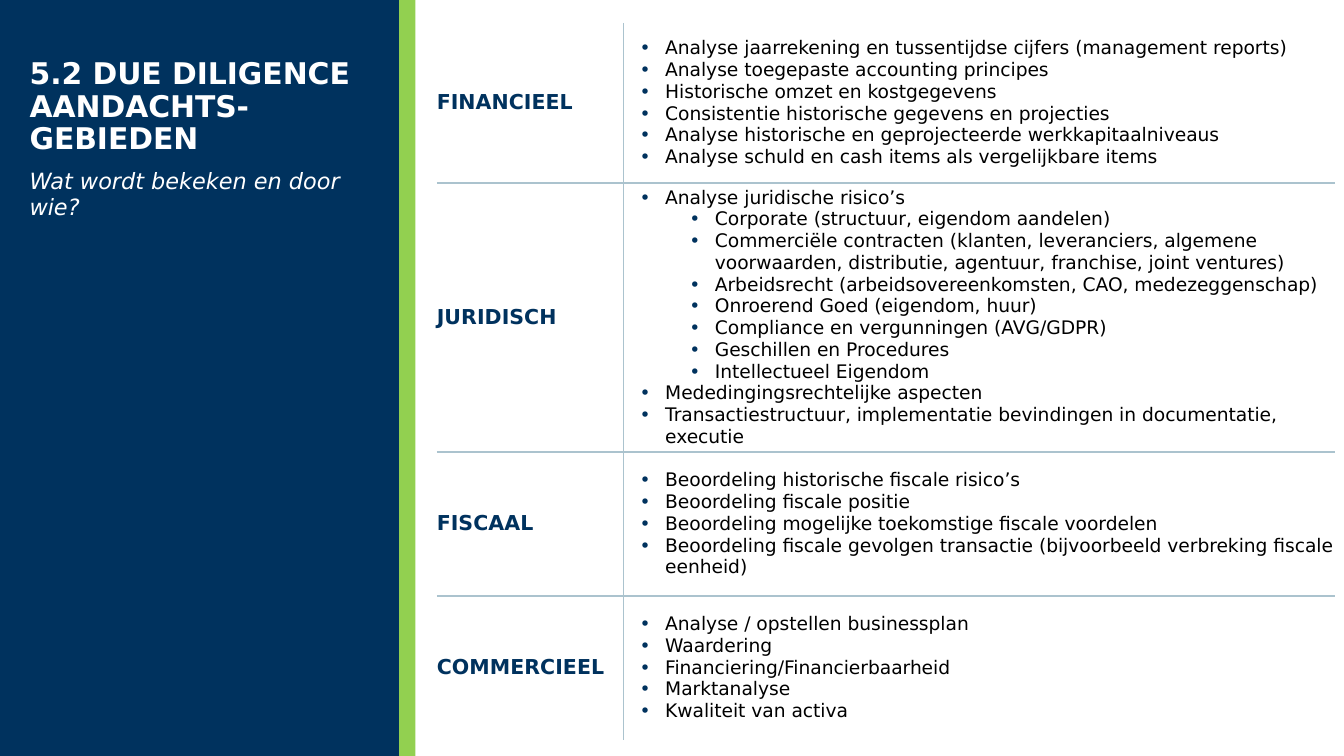
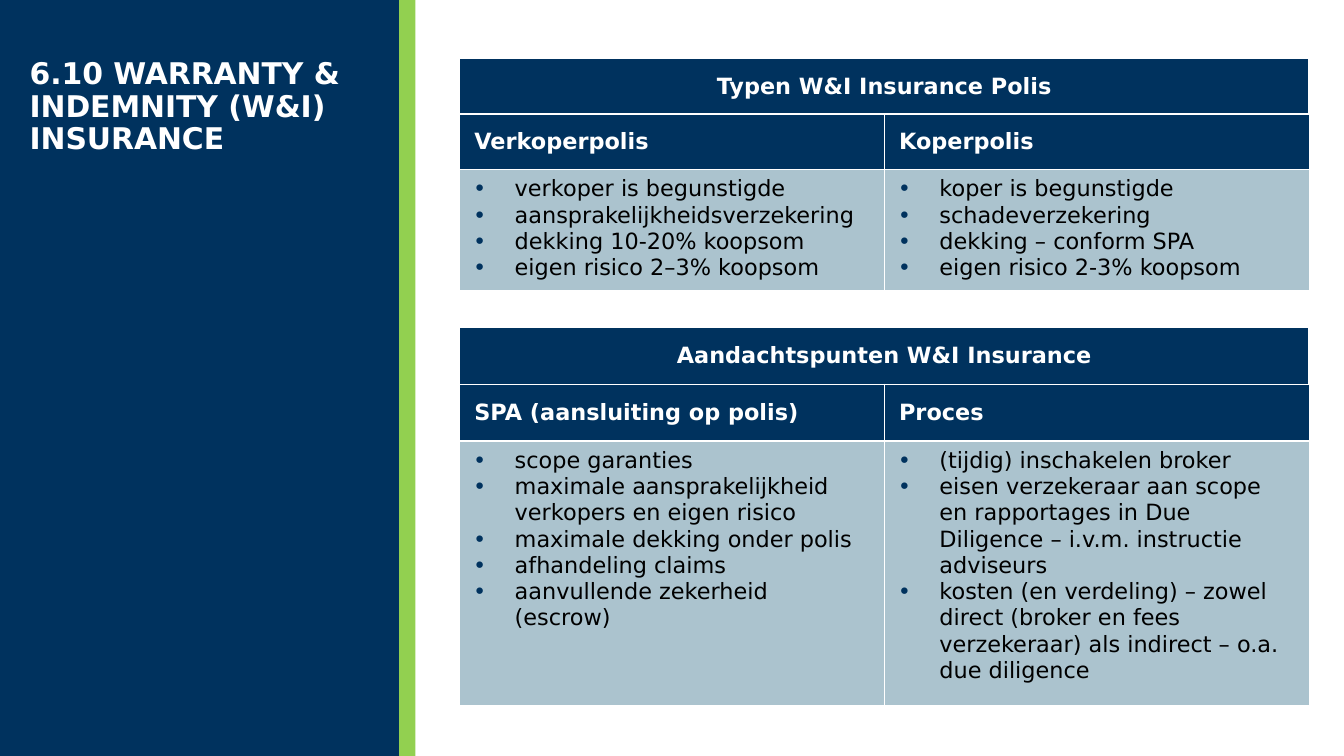
from lxml import etree
from pptx import Presentation
from pptx import util as u
from pptx.dml.color import RGBColor
from pptx.enum import shapes, text
from pptx.oxml import ns

COLOURS = {"navy": "00325E", "green": "92D050", "mist": "ABC3CE",
           "white": "FFFFFF", "black": "000000"}
FONT = "DejaVu Sans"
NO_STYLE = "{2D5ABB26-0587-4C30-8999-92F81FD0307C}"
SIDE_LEFT, SIDE_WIDTH = 0.22, 2.57

# Each point is its wording, or a (wording, level) pair.
DILIGENCE_AREAS = [
    ("FINANCIEEL", 1.19, [
        "Analyse jaarrekening en tussentijdse cijfers (management reports)",
        "Analyse toegepaste accounting principes",
        "Historische omzet en kostgegevens",
        "Consistentie historische gegevens en projecties",
        "Analyse historische en geprojecteerde werkkapitaalniveaus",
        "Analyse schuld en cash items als vergelijkbare items"]),
    ("JURIDISCH", 2, [
        "Analyse juridische risico’s",
        ("Corporate (structuur, eigendom aandelen)", 1),
        ("Commerciële contracten (klanten, leveranciers, algemene voorwaarden, "
         "distributie, agentuur, franchise, joint ventures)", 1),
        ("Arbeidsrecht (arbeidsovereenkomsten, CAO, medezeggenschap)", 1),
        ("Onroerend Goed (eigendom, huur)", 1),
        ("Compliance en vergunningen (AVG/GDPR)", 1),
        ("Geschillen en Procedures", 1),
        ("Intellectueel Eigendom", 1),
        "Mededingingsrechtelijke aspecten",
        "Transactiestructuur, implementatie bevindingen in documentatie, executie"]),
    ("FISCAAL", 1.07, [
        "Beoordeling historische fiscale risico’s",
        "Beoordeling fiscale positie",
        "Beoordeling mogelijke toekomstige fiscale voordelen",
        "Beoordeling fiscale gevolgen transactie "
        "(bijvoorbeeld verbreking fiscale eenheid)"]),
    ("COMMERCIEEL", 1.07, [
        "Analyse / opstellen businessplan",
        "Waardering",
        "Financiering/Financierbaarheid",
        "Marktanalyse",
        "Kwaliteit van activa"]),
]

POLICY_TYPES = [
    ("Verkoperpolis", [
        "verkoper is begunstigde",
        "aansprakelijkheidsverzekering",
        "dekking 10-20% koopsom",
        "eigen risico 2–3% koopsom"]),
    ("Koperpolis", [
        "koper is begunstigde",
        "schadeverzekering",
        "dekking – conform SPA",
        "eigen risico 2-3% koopsom"]),
]

POLICY_CONCERNS = [
    ("SPA (aansluiting op polis)", [
        "scope garanties",
        "maximale aansprakelijkheid verkopers en eigen risico",
        "maximale dekking onder polis",
        "afhandeling claims",
        "aanvullende zekerheid (escrow)"]),
    ("Proces", [
        "(tijdig) inschakelen broker",
        "eisen verzekeraar aan scope en rapportages in Due Diligence "
        "– i.v.m. instructie adviseurs",
        "kosten (en verdeling) – zowel direct (broker en fees verzekeraar) "
        "als indirect – o.a. due diligence"]),
]


def rgb(name):
    return RGBColor.from_string(COLOURS[name])


def style_runs(para, size, colour, bold=False, italic=False):
    for span in para.runs:
        font = span.font
        font.name, font.size = FONT, u.Pt(size)
        font.bold, font.italic = bold, italic
        font.color.rgb = rgb(colour)


def set_indent(para, left, first):
    props = para._p.get_or_add_pPr()
    props.set("marL", str(u.Inches(left)))
    props.set("indent", str(u.Inches(first)))
    return props


def add_bullet(para, left, hang, tab=None):
    props = set_indent(para, left, -hang)
    colour = etree.SubElement(props, ns.qn("a:buClr"))
    etree.SubElement(colour, ns.qn("a:srgbClr"), val=COLOURS["navy"])
    etree.SubElement(props, ns.qn("a:buFont"), typeface=FONT)
    etree.SubElement(props, ns.qn("a:buChar"), char="•")
    if tab:
        stops = etree.SubElement(props, ns.qn("a:tabLst"))
        etree.SubElement(stops, ns.qn("a:tab"), pos=str(u.Inches(tab)), algn="l")


def fill_points(cell, points, size, hang, base_level=0, tab=None):
    """Write bulleted points; each nested level is indented 0.37 inch further."""
    frame = cell.text_frame
    for index, point in enumerate(points):
        wording, depth = (point, 0) if isinstance(point, str) else point
        para = frame.add_paragraph() if index else frame.paragraphs[0]
        para.text = wording
        para.level = base_level + depth
        add_bullet(para, hang + 0.37 * depth, hang, tab)
        style_runs(para, size, "black")


def set_margins(box, left, top, right, bottom):
    box.margin_left, box.margin_top = u.Inches(left), u.Inches(top)
    box.margin_right, box.margin_bottom = u.Inches(right), u.Inches(bottom)


def add_plain_table(page, left, top, widths, heights):
    frame = page.shapes.add_table(
        len(heights), len(widths), u.Inches(left), u.Inches(top),
        u.Inches(sum(widths)), u.Inches(sum(heights)))
    table = frame.table
    table.first_row = table.horz_banding = False
    table._tbl.tblPr.find(ns.qn("a:tableStyleId")).text = NO_STYLE
    for column, width in zip(table.columns, widths):
        column.width = u.Inches(width)
    for row, height in zip(table.rows, heights):
        row.height = u.Inches(height)
    return table


def rule_inner_edges(table, colour):
    """Draw a 1 pt line on every edge shared by two cells."""
    last_row, last_column = len(table.rows) - 1, len(table.columns) - 1
    for r, row in enumerate(table.rows):
        for c, cell in enumerate(row.cells):
            edges = [("a:lnL", c > 0), ("a:lnR", c < last_column),
                     ("a:lnT", r > 0), ("a:lnB", r < last_row)]
            props = cell._tc.get_or_add_tcPr()
            tags = [tag for tag, shared in edges if shared]
            for position, tag in enumerate(tags):
                line = etree.Element(ns.qn(tag), w=str(u.Pt(1)))
                solid = etree.SubElement(line, ns.qn("a:solidFill"))
                etree.SubElement(solid, ns.qn("a:srgbClr"), val=COLOURS[colour])
                props.insert(position, line)


def set_side_bands(deck, layout, page):
    """Draw the two side bands on a page, then hand them to its layout."""
    for placeholder in list(layout.placeholders):
        if placeholder.placeholder_format.type != shapes.PP_PLACEHOLDER.TITLE:
            placeholder._element.getparent().remove(placeholder._element)
    for position, (left, width, colour) in enumerate(
            [(0, 2.97, "navy"), (2.97, 0.12, "green")]):
        band = page.shapes.add_shape(
            shapes.MSO_SHAPE.RECTANGLE, u.Inches(left), 0,
            u.Inches(width), deck.slide_height)
        band.shadow.inherit = False
        band.fill.solid()
        band.fill.fore_color.rgb = rgb(colour)
        band.line.fill.background()
        layout.shapes._spTree.insert(2 + position, band._element)


def write_side_text(box, top, height, wording, size, **style):
    box.left, box.top = u.Inches(SIDE_LEFT), u.Inches(top)
    box.width, box.height = u.Inches(SIDE_WIDTH), u.Inches(height)
    frame = box.text_frame
    frame.text = wording
    frame.word_wrap = True
    frame.auto_size = text.MSO_AUTO_SIZE.SHAPE_TO_FIT_TEXT
    frame.vertical_anchor = text.MSO_ANCHOR.TOP
    set_margins(frame, 0, 0, 0, 0)
    para = frame.paragraphs[0]
    para.alignment = text.PP_ALIGN.LEFT
    style_runs(para, size, "white", **style)
    return para


def write_title(page, wording):
    para = write_side_text(page.shapes.title, 0.44, 0.73, wording, 16, bold=True)
    para.line_spacing = 0.9


def write_subtitle(page, wording):
    box = page.shapes.add_textbox(0, 0, 0, 0)
    write_side_text(box, 1.24, 0.4, wording, 12, italic=True)


def add_areas_table(page, left, top, areas):
    table = add_plain_table(page, left, top, [1.39, 5.29],
                            [height for _, height, _ in areas])
    for row, (name, _, points) in zip(table.rows, areas):
        label, details = row.cells
        label.text_frame.text = name
        style_runs(label.text_frame.paragraphs[0], 11, "navy", bold=True)
        set_margins(label, 0, 0.39, 0.08, 0.39)
        fill_points(details, points, 10, 0.19)
        set_margins(details, 0.12, 0, 0, 0)
        for cell in (label, details):
            cell.vertical_anchor = text.MSO_ANCHOR.MIDDLE
            cell.fill.background()
    rule_inner_edges(table, "mist")


def write_heading(cell, wording):
    cell.text_frame.text = wording
    cell.vertical_anchor = text.MSO_ANCHOR.MIDDLE
    para = cell.text_frame.paragraphs[0]
    set_indent(para, 0, 0)
    style_runs(para, 12, "white", bold=True)
    return para


def add_policy_table(page, left, top, heights, heading, columns):
    table = add_plain_table(page, left, top, [3.16, 3.16], heights)
    for r, row in enumerate(table.rows):
        for cell in row.cells:
            cell.fill.solid()
            cell.fill.fore_color.rgb = rgb("navy" if r < 2 else "mist")
    table.cell(0, 0).merge(table.cell(0, 1))
    write_heading(table.cell(0, 0), heading).alignment = text.PP_ALIGN.CENTER
    for c, (name, points) in enumerate(columns):
        column_head = table.cell(1, c)
        write_heading(column_head, name).level = 1
        set_margins(column_head, 0.11, 0.05, 0.11, 0.05)
        fill_points(table.cell(2, c), points, 12, 0.31, base_level=2, tab=0.2)
    rule_inner_edges(table, "white")


def build_diligence_page(page):
    write_title(page, "5.2 DUE DILIGENCE AANDACHTS-GEBIEDEN")
    write_subtitle(page, "Wat wordt bekeken en door wie?")
    add_areas_table(page, 3.25, 0.17, DILIGENCE_AREAS)


def build_insurance_page(page):
    write_title(page, "6.10 WARRANTY & INDEMNITY (W&I) INSURANCE")
    add_policy_table(page, 3.42, 0.44, [0.41, 0.41, 0.89],
                     "Typen W&I Insurance Polis", POLICY_TYPES)
    add_policy_table(page, 3.42, 2.44, [0.42, 0.42, 1.97],
                     "Aandachtspunten W&I Insurance", POLICY_CONCERNS)


def main():
    deck = Presentation()
    deck.slide_width = u.Inches(10)
    deck.slide_height = deck.slide_width * 9 // 16
    layout = deck.slide_layouts[5]
    diligence_page = deck.slides.add_slide(layout)
    set_side_bands(deck, layout, diligence_page)
    build_diligence_page(diligence_page)
    build_insurance_page(deck.slides.add_slide(layout))
    deck.save("out.pptx")


if __name__ == "__main__":
    main()
